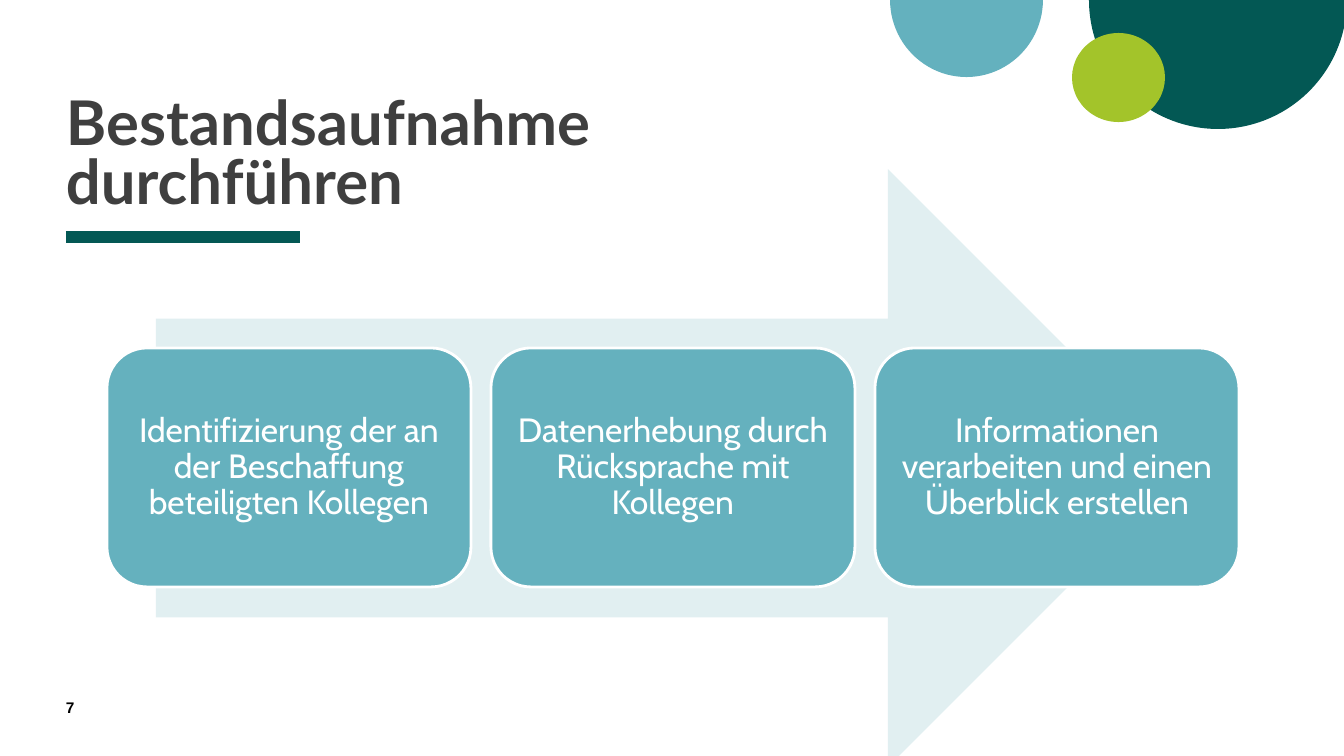
"""Build the slide on taking stock: three steps on a wide arrow."""
from dataclasses import dataclass
from typing import Any

from lxml.etree import SubElement
from pptx import Presentation
from pptx.dml.color import RGBColor
from pptx.enum.shapes import MSO_CONNECTOR, MSO_SHAPE
from pptx.enum.text import MSO_ANCHOR, PP_ALIGN
from pptx.oxml.ns import qn
from pptx.util import Emu, Pt

COLORS = {"dark": "035854", "teal": "64B1BE", "lime": "A3C42A", "pale": "E1EFF1",
          "step": "65B1BE", "ink": "3F3F3F", "black": "000000", "white": "FFFFFF"}
STEPS = ("Identifizierung der an der Beschaffung beteiligten Kollegen",
         "Datenerhebung durch Rücksprache mit Kollegen",
         "Informationen verarbeiten und einen Überblick erstellen")
HALF = (0, 108)


@dataclass(frozen=True)
class Box:
    left: int
    top: int
    width: int
    height: int


@dataclass(frozen=True)
class Form:
    kind: MSO_SHAPE
    box: Box
    color: str
    bends: tuple[float, ...] = ()


@dataclass(frozen=True)
class Style:
    font: dict[str, Any]
    color: str
    para: dict[str, Any]
    frame: dict[str, Any]
    inset: int = 0


def px(count: int) -> Emu:
    return Emu(round(count * 12192000 / 1344))


def place(box: Box) -> tuple[Emu, ...]:
    return px(box.left), px(box.top), px(box.width), px(box.height)


def tint(name: str) -> RGBColor:
    return RGBColor.from_string(COLORS[name])


def apply(target: Any, values: dict[str, Any]) -> None:
    for key, value in values.items():
        setattr(target, key, value)


def draw(slide: Any, form: Form) -> Any:
    shape = slide.shapes.add_shape(form.kind, *place(form.box))
    shape.shadow.inherit = False
    shape.fill.solid()
    shape.fill.fore_color.rgb = tint(form.color)
    shape.line.fill.background()
    for index, bend in enumerate(form.bends):
        shape.adjustments[index] = bend
    return shape


def write(shape: Any, text: str, style: Style) -> None:
    frame = shape.text_frame
    sides = ("left", "top", "right", "bottom")
    apply(frame, {"word_wrap": True} | style.frame)
    apply(frame, {f"margin_{side}": px(style.inset) for side in sides})
    para = frame.paragraphs[0]
    apply(para, style.para)
    run = para.add_run()
    run.text = text
    apply(run.font, style.font)
    run.font.color.rgb = tint(style.color)


def rule(slide: Any, left: int, right: int, top: int) -> None:
    line = slide.shapes.add_connector(
        MSO_CONNECTOR.STRAIGHT, px(left), px(top), px(right), px(top))
    line.line.color.rgb = tint("dark")
    line.line.width = Pt(8)
    SubElement(line._element.spPr, qn("a:effectLst"))


def main() -> None:
    deck = Presentation()
    apply(deck, {"slide_width": px(1344), "slide_height": px(756)})
    slide = deck.slides.add_slide(deck.slide_layouts[6])

    for form in (
        Form(MSO_SHAPE.PIE, Box(1089, -129, 258, 258), "dark", HALF),
        Form(MSO_SHAPE.PIE, Box(890, -78, 153, 155), "teal", HALF),
        Form(MSO_SHAPE.OVAL, Box(1072, 33, 93, 89), "lime"),
        Form(MSO_SHAPE.RIGHT_ARROW, Box(156, 169, 1031, 598), "pale", (0.5, 0.5)),
    ):
        draw(slide, form)
    rule(slide, 66, 300, 237)

    title = Style({"name": "Lato", "size": Pt(44), "bold": True}, "ink",
                  {"line_spacing": 0.8}, {"vertical_anchor": MSO_ANCHOR.BOTTOM})
    number = Style({"name": "Arial", "size": Pt(11), "bold": True}, "black",
                   {}, {"vertical_anchor": MSO_ANCHOR.TOP})
    for text, box, style in (
        ("Bestandsaufnahme durchführen", Box(66, 41, 748, 175), title),
        ("7", Box(66, 698, 57, 27), number),
    ):
        write(slide.shapes.add_textbox(*place(box)), text, style)

    label = Style({"name": "Cabin", "size": Pt(24)}, "white",
                  {"alignment": PP_ALIGN.CENTER, "line_spacing": 0.9},
                  {"vertical_anchor": MSO_ANCHOR.MIDDLE}, 13)
    for index, text in enumerate(STEPS):
        box = Box(107 + 384 * index, 348, 364, 239)
        card = draw(slide, Form(MSO_SHAPE.ROUNDED_RECTANGLE, box, "step", (0.167,)))
        card.line.color.rgb = tint("white")
        card.line.width = Pt(2)
        write(card, text, label)

    deck.save("out.pptx")


if __name__ == "__main__":
    main()
